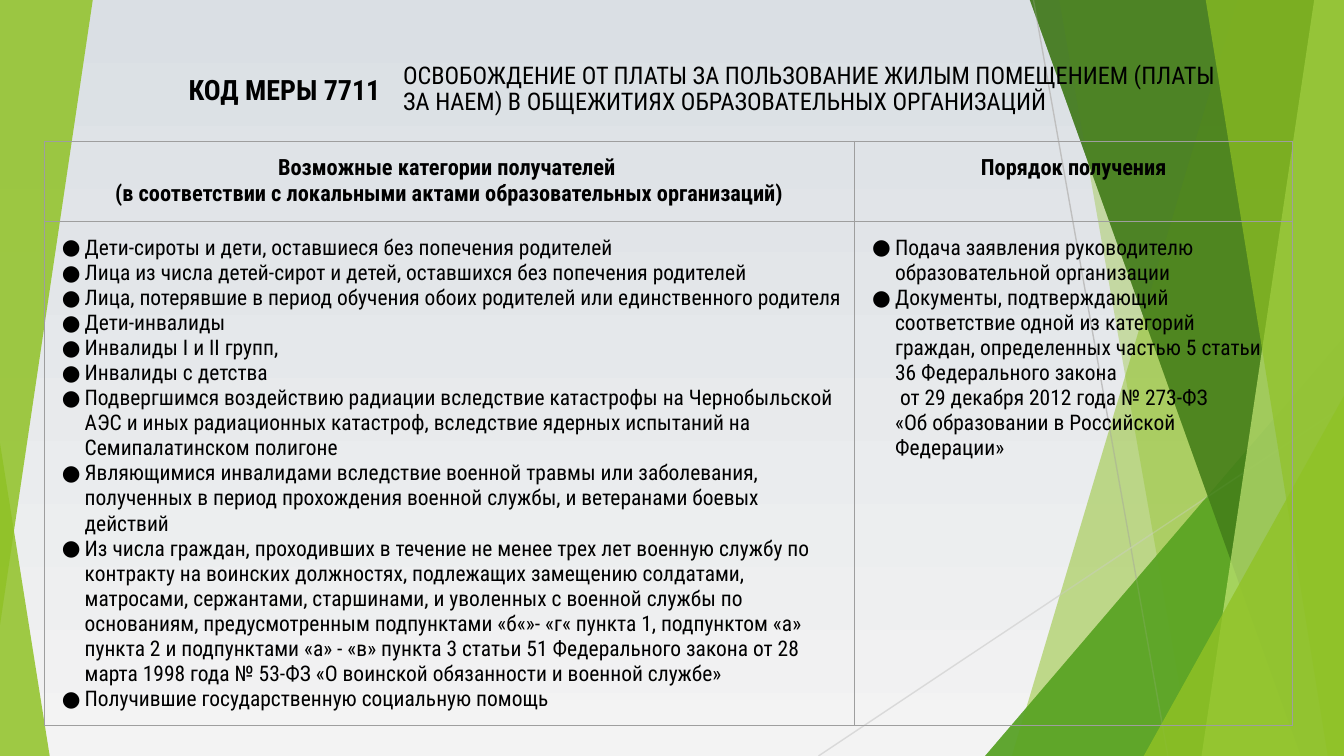
from typing import NamedTuple

from pptx import Presentation
from pptx.dml.color import RGBColor
from pptx.enum.shapes import MSO_CONNECTOR, MSO_SHAPE
from pptx.enum.text import MSO_ANCHOR, PP_ALIGN
from pptx.oxml.ns import qn
from pptx.oxml.xmlchemy import OxmlElement
from pptx.util import Inches, Pt

PAGE_WIDTH = 10
PAGE_HEIGHT = PAGE_WIDTH * 9 / 16
HEADING_HEIGHT = 0.6
FONT = "Roboto Condensed"
BLACK = RGBColor(0x00, 0x00, 0x00)
LIME = RGBColor(0x90, 0xC2, 0x26)
PALE_LIME = RGBColor(0xC0, 0xE4, 0x74)
GREEN = RGBColor(0x54, 0xA0, 0x21)
DARK_GREEN = RGBColor(0x3F, 0x78, 0x19)
SKY_TOP = RGBColor(0xDA, 0xDF, 0xE4)
SKY_BOTTOM = RGBColor(0xF3, 0xF3, 0xF3)
GREY = RGBColor(0xBF, 0xBF, 0xBF)
LIGHT_GREY = RGBColor(0xD9, 0xD9, 0xD9)
BORDER = RGBColor(0x9E, 0x9E, 0x9E)

MEASURE_CODE = "КОД МЕРЫ 7711"
MEASURE_NAME = (
    "ОСВОБОЖДЕНИЕ ОТ ПЛАТЫ ЗА ПОЛЬЗОВАНИЕ ЖИЛЫМ ПОМЕЩЕНИЕМ (ПЛАТЫ ЗА НАЕМ) "
    "В ОБЩЕЖИТИЯХ ОБРАЗОВАТЕЛЬНЫХ ОРГАНИЗАЦИЙ"
)
HEADINGS = [
    ["Возможные категории получателей ",
     "(в соответствии с локальными актами образовательных организаций)"],
    ["Порядок получения"],
]
RECIPIENTS = [
    "Дети-сироты и дети, оставшиеся без попечения родителей",
    "Лица из числа детей-сирот и детей, оставшихся без попечения родителей",
    "Лица, потерявшие в период обучения обоих родителей или единственного родителя",
    "Дети-инвалиды",
    "Инвалиды I и II групп,",
    "Инвалиды с детства",
    "Подвергшимся воздействию радиации вследствие катастрофы на Чернобыльской АЭС "
    "и иных радиационных катастроф, вследствие ядерных испытаний на Семипалатинском полигоне",
    "Являющимися инвалидами вследствие военной травмы или заболевания, полученных "
    "в период прохождения военной службы, и ветеранами боевых действий",
    "Из числа граждан, проходивших в течение не менее трех лет военную службу по контракту "
    "на воинских должностях, подлежащих замещению солдатами, матросами, сержантами, "
    "старшинами, и уволенных с военной службы по основаниям, предусмотренным подпунктами "
    "«б«»- «г« пункта 1, подпунктом «а» пункта 2 и подпунктами «а» - «в» пункта 3 статьи 51 "
    "Федерального закона от 28 марта 1998 года № 53-ФЗ "
    "«О воинской обязанности и военной службе»",
    "Получившие государственную социальную помощь",
]
PROCEDURE = [
    "Подача заявления руководителю образовательной организации",
    "Документы, подтверждающий соответствие одной из категорий граждан, определенных "
    "частью 5 статьи 36 Федерального закона\n от 29 декабря 2012 года № 273-ФЗ \n"
    "«Об образовании в Российской Федерации»",
]


class Box(NamedTuple):
    left: float
    top: float
    width: float
    height: float

    def inches(self):
        return [Inches(value) for value in self]


def add_element(parent, tag, **attributes):
    element = OxmlElement(tag)
    for name, value in attributes.items():
        element.set(name, str(value))
    parent.append(element)
    return element


def paint(shape, color, opacity):
    shape.shadow.inherit = False
    shape.fill.solid()
    shape.fill.fore_color.rgb = color
    color_element = shape._element.spPr.find(qn("a:solidFill"))[0]
    add_element(color_element, "a:alpha", val=opacity * 1000)
    shape.line.fill.background()


def add_triangle(page, box, apex, color, opacity, rotation=0):
    triangle = page.shapes.add_shape(MSO_SHAPE.ISOSCELES_TRIANGLE, *box.inches())
    triangle.adjustments[0] = apex
    triangle.rotation = rotation
    paint(triangle, color, opacity)


def add_band(page, box, top_left, bottom_left, color, opacity):
    """Fill from a slanted left edge to the right side of the box."""
    right, bottom = box.left + box.width, box.top + box.height
    corners = [(right, box.top), (right, bottom), (box.left + bottom_left, bottom)]
    builder = page.shapes.build_freeform(Inches(box.left + top_left), Inches(box.top))
    builder.add_line_segments([(Inches(x), Inches(y)) for x, y in corners])
    paint(builder.convert_to_shape(), color, opacity)


def add_ray(page, start, end, color):
    ray = page.shapes.add_connector(
        MSO_CONNECTOR.STRAIGHT, *[Inches(value) for value in start + end])
    ray.line.color.rgb = color
    ray.line.width = Pt(0.75)
    add_element(ray._element.spPr, "a:effectLst")


def add_facets(page, box):
    """Overlapping translucent facets along the right side of the box."""
    right, bottom = box.left + box.width, box.top + box.height

    def corner_triangle(width, height, color, opacity):
        corner = Box(right - width, bottom - height, width, height)
        add_triangle(page, corner, 1, color, opacity)

    add_band(page, box, 1.68, 0, LIME, 30)
    add_band(page, box, 0.35, 1.34, LIME, 20)
    corner_triangle(2.67, 3.12, GREEN, 72)
    add_band(page, box, 0.13, 2.15, DARK_GREEN, 70)
    add_band(page, box, 2.25, 1.41, PALE_LIME, 70)
    add_band(page, box, 1.44, 2.35, LIME, 65)
    corner_triangle(1.49, 2.68, LIME, 80)


def add_backdrop(page, box):
    fill = page.background.fill
    fill.gradient()
    fill.gradient_angle = 270
    for stop, color, position in zip(fill.gradient_stops, (SKY_TOP, SKY_BOTTOM), (0, 1)):
        stop.color.rgb = color
        stop.position = position
    first_stop = page.background._cSld.find(".//" + qn("a:gs"))
    add_element(first_stop[0], "a:alpha", val=60000)

    right, bottom = box.left + box.width, box.top + box.height
    facets = Box(right - 2.47, box.top - 0.01, 2.47, box.height + 0.01)
    add_facets(page, facets)
    add_triangle(page, Box(box.left, bottom - 2.33, 0.37, 2.33), 0, LIME, 85)
    add_ray(page, (right - 2.31, box.top), (right - 1.31, bottom), GREY)
    add_ray(page, (right, box.top + 3.02), (right - 3.91, bottom), LIGHT_GREY)
    add_facets(page, facets)
    add_triangle(page, Box(box.left, box.top, 0.69, 4.65), 1, LIME, 85, rotation=180)


def set_font(para, size, bold=False):
    para.font.name = FONT
    para.font.size = Pt(size)
    para.font.bold = bold
    para.font.color.rgb = BLACK


def add_label(page, box, text, size, inset_x, inset_y, bold=False):
    frame = page.shapes.add_textbox(*box.inches()).text_frame
    frame.word_wrap = True
    frame.vertical_anchor = MSO_ANCHOR.MIDDLE
    frame.margin_left = frame.margin_right = Inches(inset_x)
    frame.margin_top = frame.margin_bottom = Inches(inset_y)
    para = frame.paragraphs[0]
    para.text = text
    set_font(para, size, bold)
    return para


def add_header(page, box):
    code_width = 2.11
    code = add_label(page, Box(box.left, box.top, code_width, box.height),
                     MEASURE_CODE, 15, 0.1, 0.1, bold=True)
    code.alignment = PP_ALIGN.RIGHT
    name_box = Box(box.left + code_width, box.top, box.width - code_width, box.height)
    name = add_label(page, name_box, MEASURE_NAME, 13, 0.07, 0.04)
    name.line_spacing = 0.9


def add_bullet(para, size):
    properties = para._p.get_or_add_pPr()
    properties.set("marL", str(Inches(0.2)))
    properties.set("indent", str(Inches(-0.17)))
    add_element(add_element(properties, "a:buClr"), "a:srgbClr", val=BLACK)
    add_element(properties, "a:buSzPts", val=int(size * 100))
    add_element(properties, "a:buFont", typeface=FONT)
    add_element(properties, "a:buChar", char="●")


def add_borders(cell):
    properties = cell._tc.get_or_add_tcPr()
    for position, side in enumerate(("a:lnL", "a:lnR", "a:lnT", "a:lnB")):
        line = add_element(properties, side, w=Pt(0.75))
        add_element(add_element(line, "a:solidFill"), "a:srgbClr", val=BORDER)
        properties.insert(position, line)


def fill_cell(cell, texts, heading):
    cell.fill.background()
    add_borders(cell)
    cell.margin_left = cell.margin_right = Inches(0.1)
    cell.margin_top = cell.margin_bottom = Inches(0.1)
    frame = cell.text_frame
    size = 12 if heading else 11.5
    for index, text in enumerate(texts):
        para = frame.add_paragraph() if index else frame.paragraphs[0]
        para.text = text
        if heading:
            para.alignment = PP_ALIGN.CENTER
        else:
            add_bullet(para, size)
        set_font(para, size, heading)


def add_measure_table(page, box):
    table = page.shapes.add_table(2, 2, *box.inches()).table
    table.first_row = table.horz_banding = False
    table.columns[0].width = Inches(6.03)
    table.columns[1].width = Inches(box.width - 6.03)
    table.rows[0].height = Inches(HEADING_HEIGHT)
    table.rows[1].height = Inches(box.height - HEADING_HEIGHT)
    for row, contents in enumerate((HEADINGS, [RECIPIENTS, PROCEDURE])):
        for column, texts in enumerate(contents):
            fill_cell(table.cell(row, column), texts, heading=row == 0)


def main():
    deck = Presentation()
    deck.slide_width, deck.slide_height = Inches(PAGE_WIDTH), Inches(PAGE_HEIGHT)
    page = deck.slides.add_slide(deck.slide_layouts[6])
    add_backdrop(page, Box(0, 0, PAGE_WIDTH, PAGE_HEIGHT))
    add_measure_table(page, Box(0.33, 1.05, 9.29, 4.34))
    add_header(page, Box(0.82, 0.28, 8.4, 0.77))
    deck.save("out.pptx")


if __name__ == "__main__":
    main()
